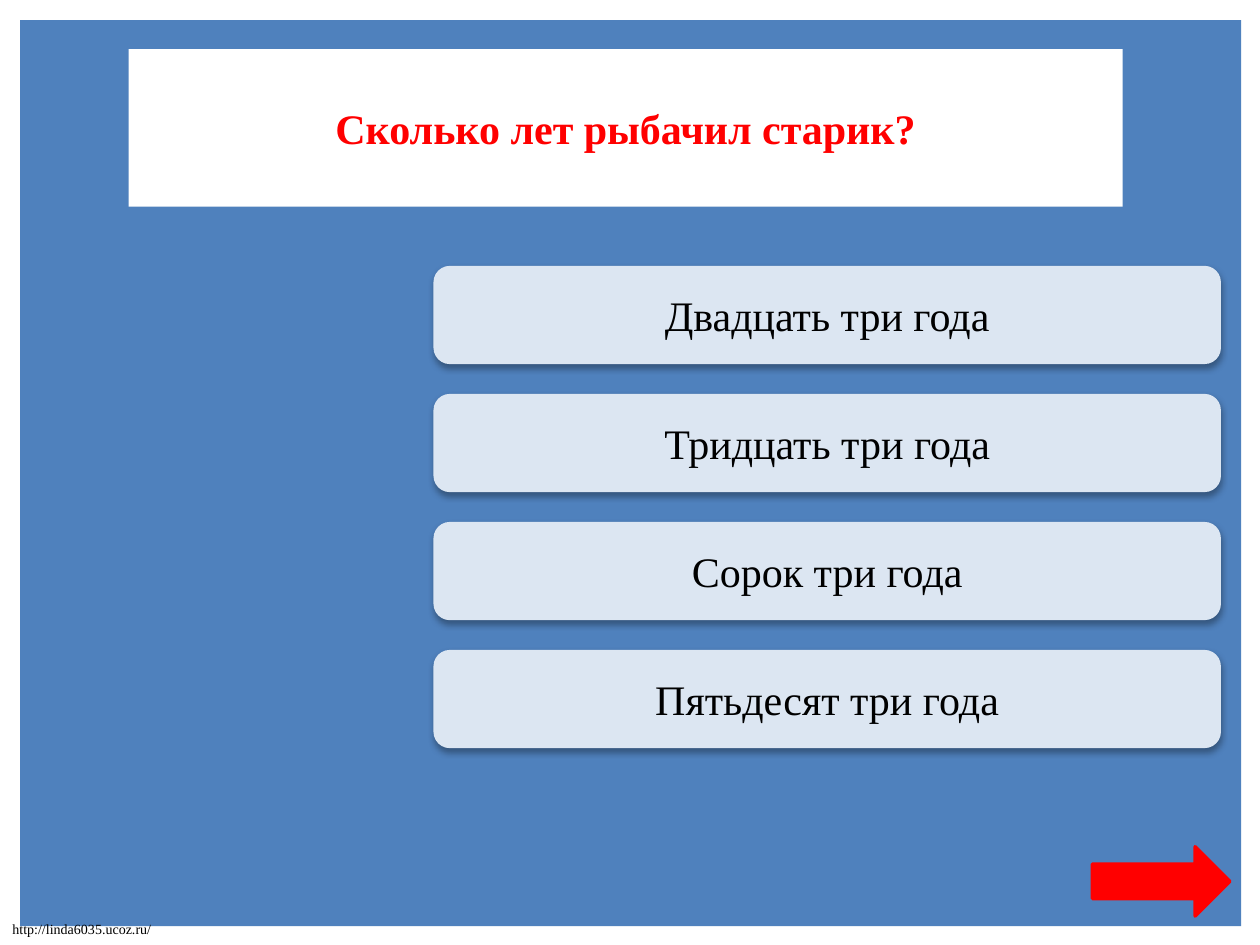
"""Build a quiz slide with one question, four answers and a forward arrow."""
from lxml import etree
from pptx import Presentation
from pptx.dml.color import RGBColor
from pptx.enum import shapes, text
from pptx.oxml import parse_xml
from pptx.oxml.ns import nsdecls
from pptx.util import Inches, Pt

theme = {
    "blue": RGBColor(0x4F, 0x81, 0xBD),
    "pale": RGBColor(0xDC, 0xE6, 0xF2),
    "white": RGBColor(255, 255, 255),
    "red": RGBColor(255, 0, 0),
    "black": RGBColor(0, 0, 0),
    "font": "Times New Roman",
    "body": Pt(24),
    "small": Pt(8),
}
kinds = shapes.MSO_SHAPE
answers = ["Двадцать три года", "Тридцать три года", "Сорок три года", "Пятьдесят три года"]
shadow = (
    f'<a:effectLst {nsdecls("a")}><a:outerShdw blurRad="44450" dist="27940" dir="5400000" '
    'algn="ctr" rotWithShape="0"><a:srgbClr val="000000"><a:alpha val="32000"/>'
    "</a:srgbClr></a:outerShdw></a:effectLst>"
)


def draw(kind, box, color):
    shape = slide.shapes.add_shape(kind, *[Inches(n) for n in box])
    shape.shadow.inherit = False
    shape.fill.solid()
    shape.fill.fore_color.rgb = theme[color]
    shape.line.fill.background()
    return shape


def write(shape, words, color, size="body", bold=False, align=text.PP_ALIGN.CENTER):
    frame = shape.text_frame
    frame.text = words
    para = frame.paragraphs[0]
    para.alignment = align
    font = para.runs[0].font
    for name, value in {"name": theme["font"], "size": theme[size], "bold": bold}.items():
        setattr(font, name, value)
    font.color.rgb = theme[color]
    return frame


deck = Presentation()
deck.slide_width, deck.slide_height = Inches(10), Inches(7.5)
slide = deck.slides.add_slide(deck.slide_layouts[5])

title = slide.shapes.title
place = {"left": 1.02, "top": 0.39, "width": 7.89, "height": 1.25}
for name, value in place.items():
    setattr(title, name, Inches(value))
title.element.spPr.insert(1, parse_xml(
    f'<a:prstGeom {nsdecls("a")} prst="roundRect"><a:avLst/></a:prstGeom>'))
title.fill.solid()
title.fill.fore_color.rgb = theme["white"]
frame = write(title, "Сколько лет рыбачил старик?", "red", bold=True)
frame.auto_size = text.MSO_AUTO_SIZE.NONE
frame.vertical_anchor = text.MSO_ANCHOR.MIDDLE

panel = draw(kinds.RECTANGLE, (0.16, 0.16, 9.69, 7.19), "blue")
title.element.addprevious(panel.element)

link = slide.shapes.add_textbox(Inches(0), Inches(7.26), Inches(1.31), Inches(0.24))
frame = write(link, "http://linda6035.ucoz.ru/", "black", "small", align=text.PP_ALIGN.LEFT)
frame.word_wrap = False
frame.auto_size = text.MSO_AUTO_SIZE.SHAPE_TO_FIT_TEXT

for row, words in enumerate(answers):
    card = draw(kinds.ROUNDED_RECTANGLE, (3.44, 2.11 + row * 1.016, 6.25, 0.78), "pale")
    props = card.element.spPr
    props.replace(props.find("{*}effectLst"), parse_xml(shadow))
    write(card, words, "black").vertical_anchor = text.MSO_ANCHOR.MIDDLE

arrow = draw(kinds.RIGHT_ARROW, (8.67, 6.72, 1.09, 0.55), "red")
arrow.line.color.rgb = theme["red"]
arrow.line.width = Pt(2)
etree.SubElement(arrow.line._get_or_add_ln(), "{http://schemas.openxmlformats.org/drawingml/2006/main}round")

deck.save("out.pptx")
